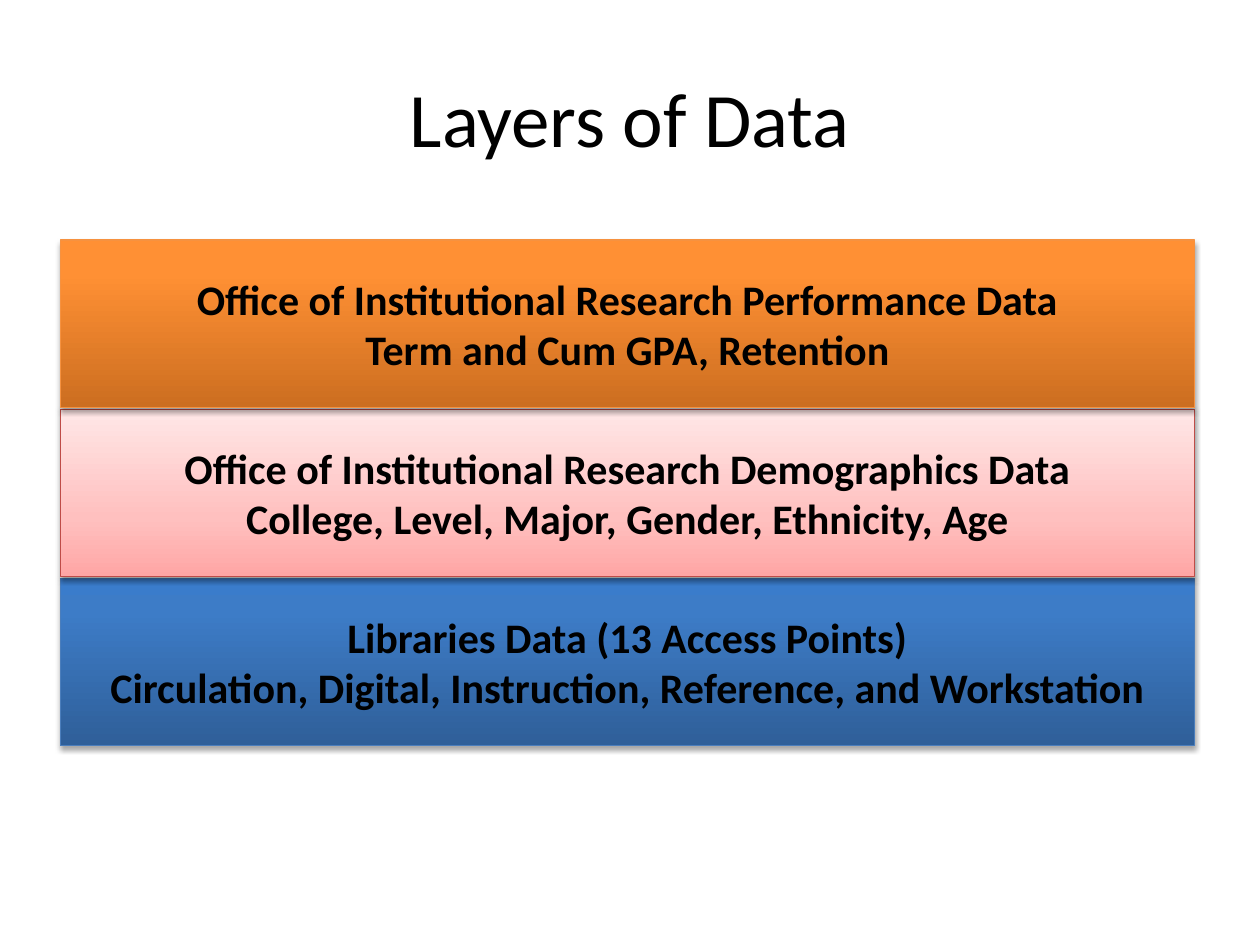
from dataclasses import dataclass
from typing import Any

from lxml.etree import SubElement as Sub
from pptx import Presentation
from pptx.dml.color import RGBColor
from pptx.enum.shapes import MSO_SHAPE as Shape
from pptx.enum.text import MSO_ANCHOR as Anchor, PP_ALIGN as Align
from pptx.oxml.ns import qn
from pptx.util import Inches, Pt

WIDE, HIGH = Inches(10), Inches(7.5)
LEFT, SPAN = 0.048, 0.9
TOP, STEP, TALL = 0.254, 0.179, 0.177

# Top to bottom: lines of text, gradient stops from the foot up, edge, shadow
LAYERS = [
    (["Office of Institutional Research Performance Data",
      "Term and Cum GPA, Retention"],
     [(0, "CC6E20"), (80, "FF9034"), (100, "FF9136")], "F69240", (35, 1.8)),
    (["Office of Institutional Research Demographics Data",
      "College, Level, Major, Gender, Ethnicity, Age"],
     [(0, "FFA6A5"), (35, "FFC0BF"), (100, "FFE7E7")], "BF4C48", (38, 1.6)),
    (["Libraries Data (13 Access Points)",
      "Circulation, Digital, Instruction, Reference, and Workstation"],
     [(0, "2F5F99"), (80, "3D7CC7"), (100, "3A7CCB")], "4B7EBC", (35, 1.8)),
]


def rgb(code):
    return RGBColor.from_string(code)


def write(shape, lines, font="Calibri", size=24, bold=False, ink="000000"):
    frame = shape.text_frame
    frame.word_wrap = True
    frame.vertical_anchor = Anchor.MIDDLE
    frame.text = "\n".join(lines)
    for para in frame.paragraphs:
        para.alignment = Align.CENTER
        face = para.runs[0].font
        face.name, face.size, face.bold = font, Pt(size), bold
        face.color.rgb = rgb(ink)


def shade(shape, stops):
    """Fill with a vertical gradient that runs from the foot up."""
    shape.fill.gradient()
    shape.fill.gradient_angle = 90
    group = next(shape.element.spPr.iter(qn("a:gsLst")))
    for old in list(group):
        group.remove(old)
    for place, code in stops:
        stop = Sub(group, qn("a:gs"), pos=str(place * 1000))
        Sub(stop, qn("a:srgbClr"), val=code)


def cast(shape, alpha, gap, blur=3.1):
    """Drop a soft black shadow straight down."""
    shape.shadow.inherit = False
    effects = shape.element.spPr.find(qn("a:effectLst"))
    drop = Sub(effects, qn("a:outerShdw"), blurRad=str(Pt(blur)),
               dist=str(Pt(gap)), dir="5400000", rotWithShape="0")
    tint = Sub(drop, qn("a:srgbClr"), val="000000")
    Sub(tint, qn("a:alpha"), val=str(alpha * 1000))


@dataclass
class Deck:
    slide: Any
    font: str = "Calibri"
    edge: float = 0.75

    def area(self, x, y, w, h):
        """Turn shares of the slide into lengths."""
        return int(x * WIDE), int(y * HIGH), int(w * WIDE), int(h * HIGH)

    def title(self, text, *box):
        shape = self.slide.shapes.add_textbox(*self.area(*box))
        write(shape, [text], font=self.font, size=44)

    def layer(self, lines, stops, line, shadow, *box):
        shape = self.slide.shapes.add_shape(Shape.RECTANGLE, *self.area(*box))
        shade(shape, stops)
        shape.line.color.rgb = rgb(line)
        shape.line.width = Pt(self.edge)
        cast(shape, *shadow)
        write(shape, lines, font=self.font, bold=True)


def main():
    show = Presentation()
    show.slide_width, show.slide_height = WIDE, HIGH
    deck = Deck(show.slides.add_slide(show.slide_layouts[6]))
    deck.title("Layers of Data", 0.05, 0.04, 0.9, 0.167)
    # The lowest layer lies at the back
    for row, layer in reversed(list(enumerate(LAYERS))):
        deck.layer(*layer, LEFT, TOP + row * STEP, SPAN, TALL)
    show.save("out.pptx")


if __name__ == "__main__":
    main()
